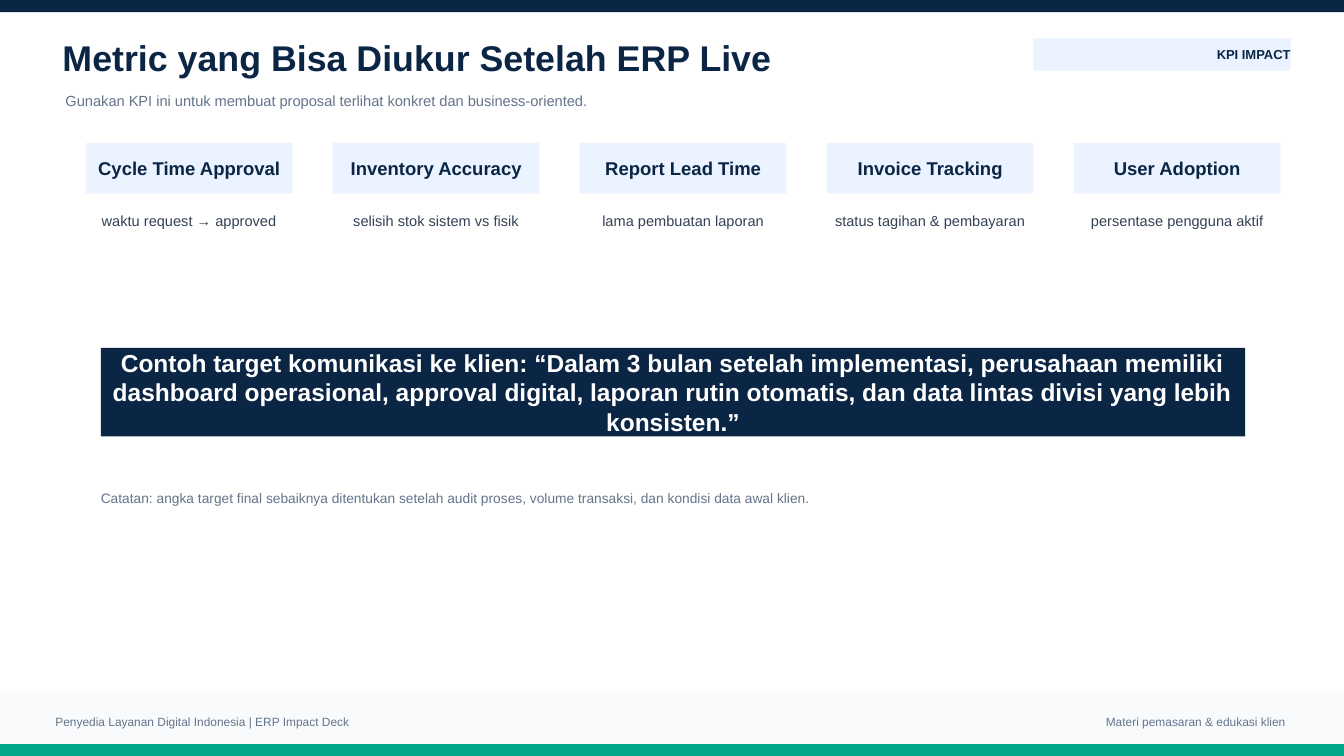
from dataclasses import dataclass
from typing import NamedTuple, Optional

from pptx import Presentation
from pptx.dml.color import RGBColor
from pptx.enum.shapes import MSO_SHAPE
from pptx.enum.text import MSO_ANCHOR, PP_ALIGN
from pptx.shapes.autoshape import Shape
from pptx.slide import Slide
from pptx.util import Inches, Pt


@dataclass(frozen=True)
class Theme:
    font: str = "Arial"
    navy: str = "0B2545"
    green: str = "00A887"
    mist: str = "F8FAFC"
    ice: str = "EAF3FF"
    slate: str = "64748B"
    ink: str = "334155"
    white: str = "FFFFFF"
    title_size: float = 25.5
    target_size: float = 17.5
    metric_size: float = 13.2
    subtitle_size: float = 10.5
    measure_size: float = 10.4
    note_size: float = 9.8
    tag_size: float = 9.3
    footer_size: float = 8.5


class Box(NamedTuple):
    left: float
    top: float
    width: float
    height: float


@dataclass(frozen=True)
class Label:
    text: str
    box: Box
    size: float
    color: str
    bold: bool = False
    align: PP_ALIGN = PP_ALIGN.LEFT
    anchor: MSO_ANCHOR = MSO_ANCHOR.MIDDLE
    fill: Optional[str] = None


class Metric(NamedTuple):
    name: str
    measure: str


THEME = Theme()
SLIDE_WIDTH, SLIDE_HEIGHT = 13.33, 7.5
EDGE_HEIGHT = 0.12
FOOTER_TOP = 6.87
FOOTER_BOTTOM = SLIDE_HEIGHT - EDGE_HEIGHT
METRIC_LEFT, METRIC_WIDTH, METRIC_GAP = 0.85, 2.05, 0.4

BANDS = [
    (Box(0, 0, SLIDE_WIDTH, EDGE_HEIGHT), THEME.navy),
    (Box(0, FOOTER_BOTTOM, SLIDE_WIDTH, EDGE_HEIGHT), THEME.green),
    (Box(0, FOOTER_TOP, SLIDE_WIDTH, FOOTER_BOTTOM - FOOTER_TOP), THEME.mist),
]

LABELS = [
    Label("Penyedia Layanan Digital Indonesia | ERP Impact Deck",
          Box(0.55, 7.07, 5.6, 0.18), THEME.footer_size, THEME.slate),
    Label("Materi pemasaran & edukasi klien",
          Box(8.45, 7.07, 4.3, 0.18), THEME.footer_size, THEME.slate,
          align=PP_ALIGN.RIGHT),
    Label("Metric yang Bisa Diukur Setelah ERP Live",
          Box(0.62, 0.36, 9.4, 0.42), THEME.title_size, THEME.navy, bold=True),
    Label("Gunakan KPI ini untuk membuat proposal terlihat konkret dan business-oriented.",
          Box(0.65, 0.86, 10.2, 0.28), THEME.subtitle_size, THEME.slate),
    Label("KPI IMPACT",
          Box(10.25, 0.38, 2.55, 0.32), THEME.tag_size, THEME.navy, bold=True,
          align=PP_ALIGN.RIGHT, fill=THEME.ice),
    Label("Contoh target komunikasi ke klien: “Dalam 3 bulan setelah implementasi, "
          "perusahaan memiliki dashboard operasional, approval digital, laporan rutin "
          "otomatis, dan data lintas divisi yang lebih konsisten.”",
          Box(1, 3.45, 11.35, 0.88), THEME.target_size, THEME.white, bold=True,
          align=PP_ALIGN.CENTER, fill=THEME.navy),
    Label("Catatan: angka target final sebaiknya ditentukan setelah audit proses, "
          "volume transaksi, dan kondisi data awal klien.",
          Box(1, 4.78, 10.9, 0.32), THEME.note_size, THEME.slate),
]

METRICS = [
    Metric("Cycle Time Approval", "waktu request → approved"),
    Metric("Inventory Accuracy", "selisih stok sistem vs fisik"),
    Metric("Report Lead Time", "lama pembuatan laporan"),
    Metric("Invoice Tracking", "status tagihan & pembayaran"),
    Metric("User Adoption", "persentase pengguna aktif"),
]


def draw_band(slide: Slide, box: Box, color: str) -> Shape:
    band = slide.shapes.add_shape(MSO_SHAPE.RECTANGLE, *map(Inches, box))
    band.shadow.inherit = False
    band.fill.solid()
    band.fill.fore_color.rgb = RGBColor.from_string(color)
    band.line.fill.background()
    return band


def draw_label(slide: Slide, label: Label) -> None:
    """Write the label on a filled band, or in a plain text box if it has no fill."""
    if label.fill:
        holder = draw_band(slide, label.box, label.fill)
    else:
        holder = slide.shapes.add_textbox(*map(Inches, label.box))
    frame = holder.text_frame
    frame_format = {
        "word_wrap": True,
        "vertical_anchor": label.anchor,
        "margin_left": 0,
        "margin_top": 0,
        "margin_right": 0,
        "margin_bottom": 0,
    }
    for attribute, value in frame_format.items():
        setattr(frame, attribute, value)
    paragraph = frame.paragraphs[0]
    paragraph.alignment = label.align
    run = paragraph.add_run()
    run.text = label.text
    font_format = {"name": THEME.font, "size": Pt(label.size), "bold": label.bold}
    for attribute, value in font_format.items():
        setattr(run.font, attribute, value)
    run.font.color.rgb = RGBColor.from_string(label.color)


def draw_metric(slide: Slide, index: int, metric: Metric) -> None:
    left = METRIC_LEFT + index * (METRIC_WIDTH + METRIC_GAP)
    draw_label(slide, Label(
        metric.name, Box(left, 1.42, METRIC_WIDTH, 0.5), THEME.metric_size,
        THEME.navy, bold=True, align=PP_ALIGN.CENTER, fill=THEME.ice))
    draw_label(slide, Label(
        metric.measure, Box(left, 2.1, METRIC_WIDTH, 0.58), THEME.measure_size,
        THEME.ink, align=PP_ALIGN.CENTER, anchor=MSO_ANCHOR.TOP))


def main() -> None:
    deck = Presentation()
    deck.slide_width = Inches(SLIDE_WIDTH)
    deck.slide_height = Inches(SLIDE_HEIGHT)
    slide = deck.slides.add_slide(deck.slide_layouts[6])
    for box, color in BANDS:
        draw_band(slide, box, color)
    for label in LABELS:
        draw_label(slide, label)
    for index, metric in enumerate(METRICS):
        draw_metric(slide, index, metric)
    deck.save("out.pptx")


if __name__ == "__main__":
    main()
